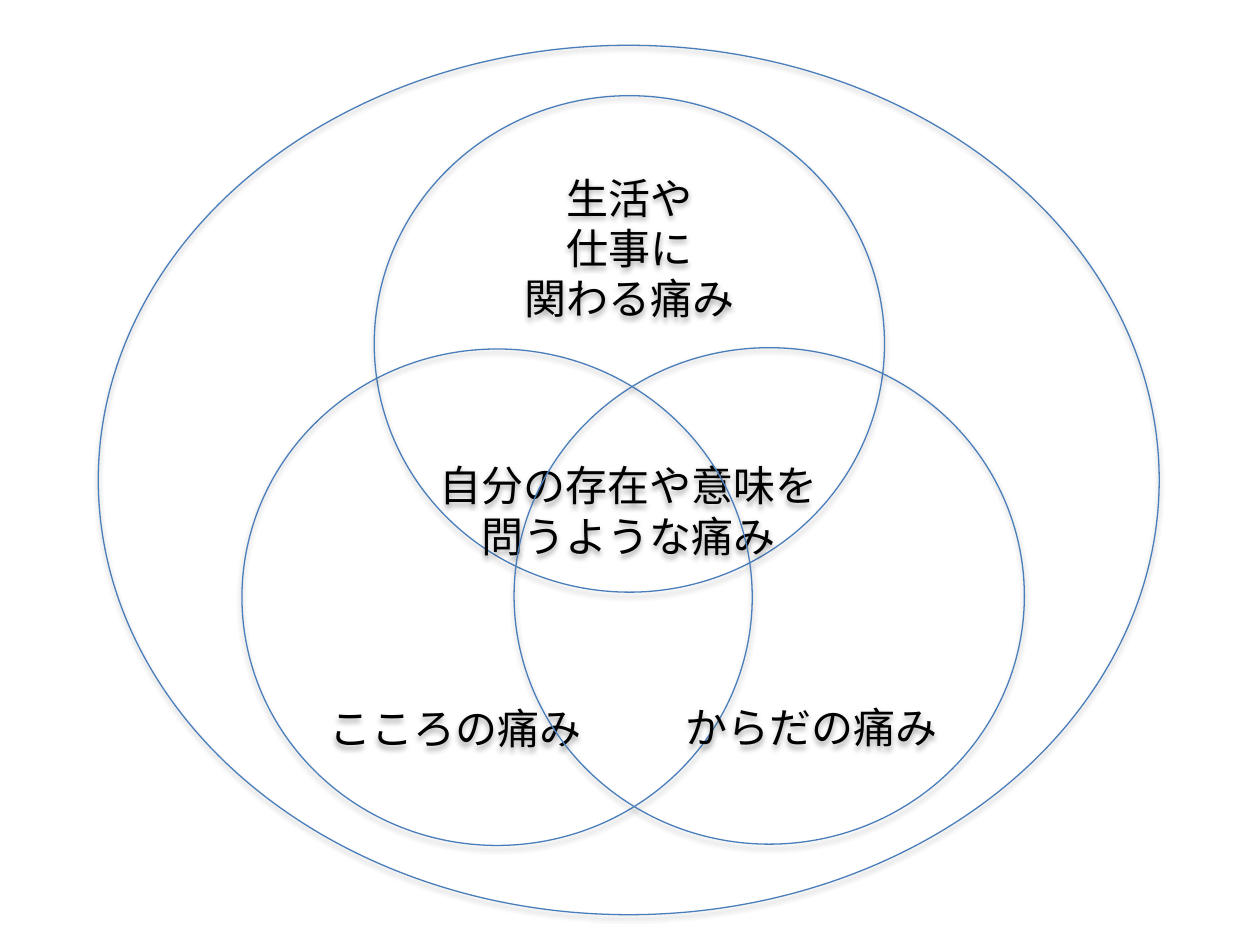
"""Build a slide on the overlapping kinds of pain, drawn as nested circles."""
import dataclasses

import lxml.etree
import pptx
import pptx.dml.color
import pptx.enum.shapes
import pptx.enum.text
import pptx.oxml.ns
import pptx.util

Inches = pptx.util.Inches
Pt = pptx.util.Pt
Align = pptx.enum.text.PP_ALIGN
qn = pptx.oxml.ns.qn


@dataclasses.dataclass(frozen=True)
class Theme:
    outline: str = "4A7EBB"
    ink: str = "000000"
    font: str = "Noto Sans CJK JP"
    text_size: float = 24
    line_pitch: float = 28.8
    outline_width: float = 0.75


THEME = Theme()
CIRCLE_SIZE = (4.05, 3.94)


def add_soft_shadow(ring):
    ring.shadow.inherit = False
    effects = ring._element.spPr.find(qn("a:effectLst"))
    shadow = lxml.etree.SubElement(
        effects, qn("a:outerShdw"), blurRad=str(Pt(3.1)), dist=str(Pt(1.8)),
        dir="5400000", rotWithShape="0")
    color = lxml.etree.SubElement(shadow, qn("a:srgbClr"), val=THEME.ink)
    lxml.etree.SubElement(color, qn("a:alpha"), val="35000")


def format_line(paragraph, align):
    paragraph.alignment = align
    paragraph.line_spacing = Pt(THEME.line_pitch)
    paragraph.font.size = Pt(THEME.text_size)
    paragraph.font.name = THEME.font
    paragraph.font.color.rgb = pptx.dml.color.RGBColor.from_string(THEME.ink)
    defaults = paragraph._p.pPr.find(qn("a:defRPr"))
    lxml.etree.SubElement(defaults, qn("a:ea"), typeface=THEME.font)


def add_ring(slide, position, size, lines, align, text_drop):
    ring = slide.shapes.add_shape(
        pptx.enum.shapes.MSO_SHAPE.OVAL,
        *(Inches(length) for length in position + size))
    ring.fill.background()
    ring.line.color.rgb = pptx.dml.color.RGBColor.from_string(THEME.outline)
    ring.line.width = Pt(THEME.outline_width)
    add_soft_shadow(ring)

    label = ring.text_frame
    label.word_wrap = True
    label.vertical_anchor = pptx.enum.text.MSO_ANCHOR.TOP
    label.margin_top = Inches(text_drop)
    label.margin_bottom = 0
    label.text = "\n".join(lines)
    for paragraph in label.paragraphs:
        format_line(paragraph, align)


def main():
    deck = pptx.Presentation()
    deck.slide_width, deck.slide_height = Inches(10), Inches(7.5)
    slide = deck.slides.add_slide(deck.slide_layouts[6])

    add_ring(slide, (2.97, 0.76), CIRCLE_SIZE,
             ["生活や", "仕事に", "関わる痛み"], Align.CENTER, 0.03)
    add_ring(slide, (0.78, 0.36), (8.42, 6.9),
             ["自分の存在や意味を", "問うような痛み"], Align.CENTER, 2.28)
    add_ring(slide, (1.92, 2.77), CIRCLE_SIZE,
             ["こころの痛み"], Align.LEFT, 2.23)
    add_ring(slide, (4.08, 2.76), CIRCLE_SIZE,
             ["からだの痛み"], Align.RIGHT, 2.23)

    deck.save("out.pptx")


if __name__ == "__main__":
    main()
